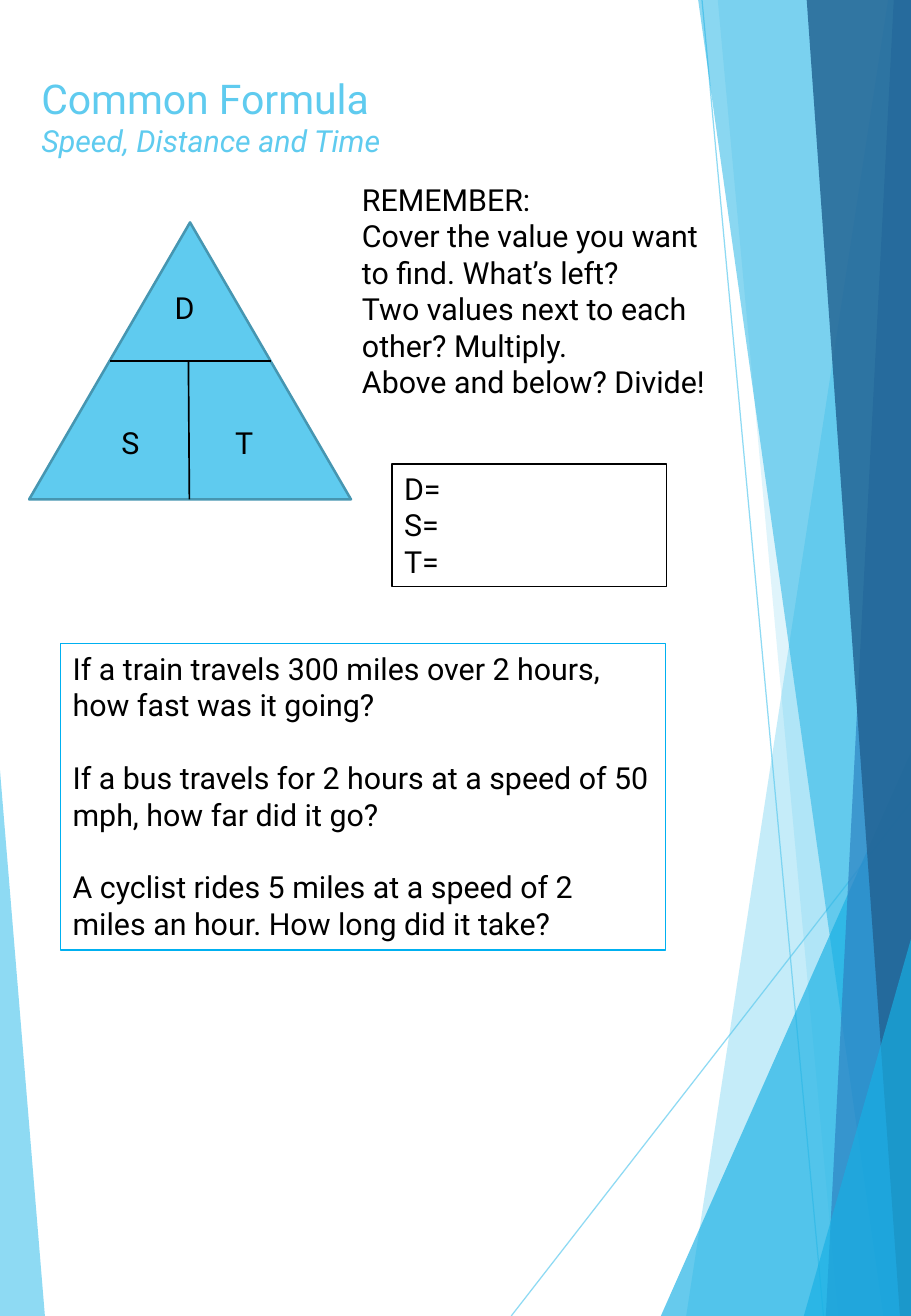
from dataclasses import dataclass

from lxml import etree
from pptx import Presentation
from pptx import util as u
from pptx.dml.color import RGBColor
from pptx.enum import shapes, text
from pptx.oxml.ns import qn

WIDTH, HEIGHT = 19.05, 27.51
LINE_HEIGHT = 21.6
COLOURS = {
    "sky": "5FCBEF",
    "cyan": "17B0E4",
    "blue": "2E83C3",
    "navy": "226292",
    "edge": "4696B1",
    "frame": "00B0F0",
    "ink": "000000",
}
BODY_FONT = {"name": "Roboto", "size": u.Pt(18)}
TITLE_FONT = {"name": "Roboto", "size": u.Pt(24.3), "italic": False}
SUBTITLE_FONT = {"name": "Roboto", "size": u.Pt(18), "italic": True}
FRAME_FORMAT = {
    "word_wrap": True,
    "auto_size": text.MSO_AUTO_SIZE.SHAPE_TO_FIT_TEXT,
    "vertical_anchor": text.MSO_ANCHOR.TOP,
}
TITLE_FORMAT = {**FRAME_FORMAT, "auto_size": text.MSO_AUTO_SIZE.NONE}


@dataclass
class Band:
    start: tuple[float, float]
    end: tuple[float, float]
    colour: str
    opacity: int
    side: float = WIDTH


@dataclass
class Rule:
    start: tuple[float, float]
    end: tuple[float, float]
    colour: str = "ink"
    weight: float = 1
    opacity: int = 100


@dataclass
class TextBlock:
    place: tuple[float, float, float, float]
    lines: list[str]
    outline: str = ""
    gap: float = 0


BACK_BAND = Band((0, 16.1), (0.94, HEIGHT), "sky", 70, side=0)
BACK_RULES = [
    Rule((10.69, HEIGHT), (WIDTH, 16.76), "sky", 0.75, 70),
    Rule((14.68, 0), (17.22, HEIGHT), "sky", 0.75, 70),
]
RIGHT_BANDS = [
    Band((18.57, 0), (14.35, HEIGHT), "sky", 36),
    Band((15.01, 0), (17.53, HEIGHT), "sky", 20),
    Band((WIDTH, 15.72), (13.82, HEIGHT), "cyan", 66),
    Band((14.6, 0), (18.47, HEIGHT), "cyan", 50),
    Band((18.69, 0), (17.27, HEIGHT), "blue", 70),
    Band((16.87, 0), (18.82, HEIGHT), "navy", 82),
    Band((WIDTH, 19.63), (16.81, HEIGHT), "cyan", 66),
]
TRIANGLE_RULES = [
    Rule((2.29, 7.54), (5.66, 7.54)),
    Rule((3.94, 7.54), (3.96, 10.44)),
]
TEXT_BLOCKS = [
    TextBlock((3.4, 5.92, 2.95, 1.02), ["D"]),
    TextBlock((4.67, 8.74, 4.39, 1.02), ["T"]),
    TextBlock((2.29, 8.74, 7.11, 1.02), ["S"]),
    TextBlock((7.32, 3.66, 7.98, 4.88), [
        "REMEMBER:",
        "Cover the value you want to find. What’s left?",
        "Two values next to each other? Multiply.",
        "Above and below? Divide!",
    ]),
    TextBlock((8.2, 9.7, 5.74, 2.57), ["D=", "S=", "T="], "ink"),
    TextBlock((1.27, 13.46, 12.65, 6.4), [
        "If a train travels 300 miles over 2 hours, how fast was it going?",
        "If a bus travels for 2 hours at a speed of 50 mph, how far did it go?",
        "A cyclist rides 5 miles at a speed of 2 miles an hour. How long did it take?",
    ], "frame", LINE_HEIGHT),
]


def apply(target, values: dict) -> None:
    for name, value in values.items():
        setattr(target, name, value)


def paint(fill, colour: str, opacity: int = 100) -> None:
    fill.solid()
    fill.fore_color.rgb = RGBColor.from_string(COLOURS[colour])
    if opacity < 100:
        tint = fill._xPr.find(qn("a:solidFill"))[0]
        etree.SubElement(tint, qn("a:alpha"), val=str(opacity * 1000))


def style_font(font, values: dict, colour: str) -> None:
    apply(font, values)
    font.color.rgb = RGBColor.from_string(COLOURS[colour])


def draw_band(page, band: Band) -> None:
    corners = [band.end, (band.side, HEIGHT), (band.side, band.start[1])]
    builder = page.shapes.build_freeform(*map(u.Cm, band.start), scale=1.0)
    builder.add_line_segments([tuple(map(u.Cm, corner)) for corner in corners])
    shape = builder.convert_to_shape()
    shape.shadow.inherit = False
    shape.line.fill.background()
    paint(shape.fill, band.colour, band.opacity)


def draw_rule(page, rule: Rule) -> None:
    line = page.shapes.add_connector(
        shapes.MSO_CONNECTOR.STRAIGHT, *map(u.Cm, rule.start + rule.end)
    )
    line.line.width = u.Pt(rule.weight)
    paint(line.line.fill, rule.colour, rule.opacity)
    etree.SubElement(line._element.spPr, qn("a:effectLst"))


def draw_title(page) -> None:
    title = page.shapes.title
    place = map(u.Cm, (0.61, 1.4, 13.23, 2.21))
    apply(title, dict(zip(("left", "top", "width", "height"), place)))
    apply(title.text_frame, TITLE_FORMAT)
    para = title.text_frame.paragraphs[0]
    para.alignment = text.PP_ALIGN.LEFT
    heading = para.add_run()
    heading.text = "Common Formula"
    para.add_line_break()
    subtitle = para.add_run()
    subtitle.text = "Speed, Distance and Time"
    for span, values in ((heading, TITLE_FONT), (subtitle, SUBTITLE_FONT)):
        style_font(span.font, values, "sky")


def draw_triangle(page) -> None:
    triangle = page.shapes.add_shape(
        shapes.MSO_SHAPE.ISOSCELES_TRIANGLE, *map(u.Cm, (0.61, 4.65, 6.73, 5.79))
    )
    triangle.shadow.inherit = False
    paint(triangle.fill, "sky")
    triangle.line.width = u.Pt(1.5)
    paint(triangle.line.fill, "edge")


def draw_text(page, block: TextBlock) -> None:
    box = page.shapes.add_textbox(*map(u.Cm, block.place))
    apply(box.text_frame, FRAME_FORMAT)
    if block.outline:
        box.line.width = u.Pt(0.75)
        paint(box.line.fill, block.outline)
    box.text_frame.text = "\n".join(block.lines)
    for index, para in enumerate(box.text_frame.paragraphs):
        para.space_before = u.Pt(block.gap if index else 0)
        for span in para.runs:
            style_font(span.font, BODY_FONT, "ink")


def main() -> None:
    deck = Presentation()
    apply(deck, {"slide_width": u.Cm(WIDTH), "slide_height": u.Cm(HEIGHT)})
    page = deck.slides.add_slide(deck.slide_layouts.get_by_name("Title Only"))
    draw_band(page, BACK_BAND)
    for rule in BACK_RULES:
        draw_rule(page, rule)
    for band in RIGHT_BANDS:
        draw_band(page, band)
    draw_title(page)
    draw_triangle(page)
    for rule in TRIANGLE_RULES:
        draw_rule(page, rule)
    for block in TEXT_BLOCKS:
        draw_text(page, block)
    deck.save("out.pptx")


if __name__ == "__main__":
    main()
